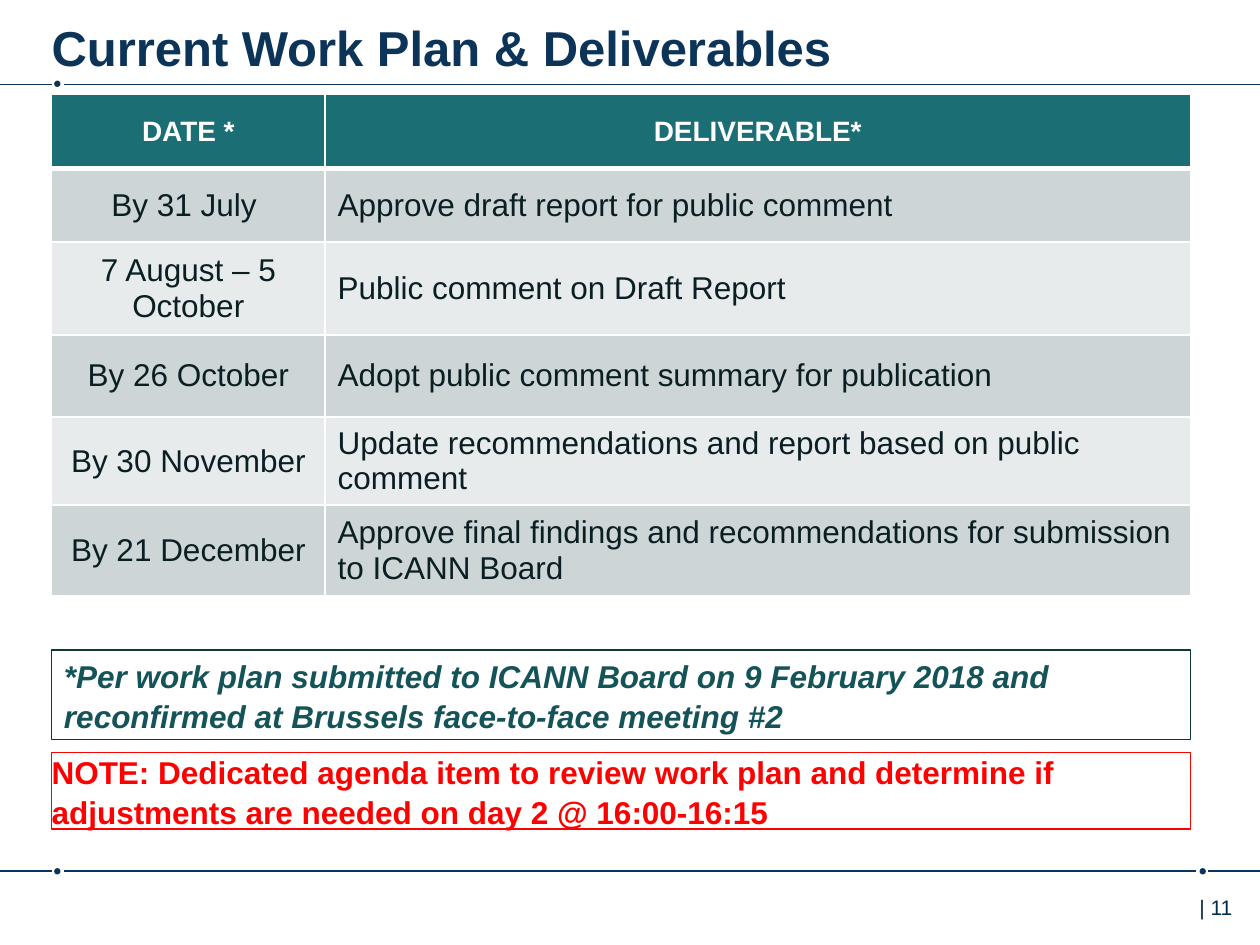
from dataclasses import dataclass

from lxml.etree import SubElement
from pptx import Presentation
from pptx.dml.color import RGBColor
from pptx.enum.shapes import MSO_CONNECTOR, MSO_SHAPE
from pptx.enum.text import MSO_ANCHOR, MSO_AUTO_SIZE, PP_ALIGN
from pptx.oxml.ns import qn
from pptx.util import Inches, Pt


@dataclass(frozen=True)
class Theme:
    font: str = "Arial"
    navy: str = "0C3458"
    page_ink: str = "002B49"
    teal: str = "1B6F74"
    dark_teal: str = "145357"
    teal_line: str = "0E373A"
    ink: str = "0A1F24"
    white: str = "FFFFFF"
    red: str = "FF0000"
    bands: tuple = ("CDD5D6", "E8EBEB")
    title_size: int = 28
    body_size: int = 18
    header_size: int = 16
    page_size: int = 12


THEME = Theme()
LEFT, WIDTH = 0.41, 9.04
COLUMN_WIDTHS = (2.17, 6.87)
ROW_HEIGHTS = (0.59, 0.58, 0.74, 0.65, 0.65, 0.72)
PLAN = (
    ("DATE *", "DELIVERABLE*"),
    ("By 31 July ", "Approve draft report for public comment"),
    ("7 August – 5 October", "Public comment on Draft Report"),
    ("By 26 October", "Adopt public comment summary for publication"),
    ("By 30 November", "Update recommendations and report based on public comment"),
    ("By 21 December", "Approve final findings and recommendations for submission to ICANN Board"),
)


def color(value):
    return RGBColor.from_string(value)


def place(left, top, width, height):
    return [Inches(value) for value in (left, top, width, height)]


def write(frame, text, ink, align=PP_ALIGN.LEFT, spacing=1.0, **font_values):
    """Put one formatted paragraph in a text frame."""
    frame.word_wrap = True
    para = frame.paragraphs[0]
    para.alignment = align
    para.line_spacing = spacing
    span = para.add_run()
    span.text = text
    for name, value in {"name": THEME.font, **font_values}.items():
        setattr(span.font, name, value)
    span.font.color.rgb = color(ink)


def set_insets(frame, left, top, right, bottom):
    insets = {"left": left, "top": top, "right": right, "bottom": bottom}
    for side, value in insets.items():
        setattr(frame, f"margin_{side}", Inches(value))


def add_rule(page, start, end, height):
    rule = page.shapes.add_connector(
        MSO_CONNECTOR.STRAIGHT, *place(start, height, end, height))
    rule.line.color.rgb = color(THEME.navy)
    rule.line.width = Pt(1)
    SubElement(rule._element.spPr, qn("a:effectLst"))


def add_dot(page, left, top):
    dot = page.shapes.add_shape(MSO_SHAPE.OVAL, *place(left, top, 0.05, 0.05))
    dot.shadow.inherit = False
    dot.fill.solid()
    dot.fill.fore_color.rgb = color(THEME.navy)
    dot.line.fill.background()


def add_title(page, text):
    title = page.shapes.title
    title.left, title.top, title.width, title.height = place(LEFT, 0.05, 8.76, 0.49)
    frame = title.text_frame
    frame.auto_size = MSO_AUTO_SIZE.NONE
    frame.vertical_anchor = MSO_ANCHOR.TOP
    set_insets(frame, 0, 0.09, 0, 0)
    write(frame, text, THEME.navy, size=Pt(THEME.title_size), bold=True)


def add_page_number(page, text):
    box = page.shapes.add_textbox(*place(9.42, 7.05, 0.58, 0.4))
    write(box.text_frame, text, THEME.page_ink, size=Pt(THEME.page_size))


def set_borders(cell, bottom):
    properties = cell._tc.get_or_add_tcPr()
    widths = {"lnL": 1, "lnR": 1, "lnT": 1, "lnB": bottom}
    for position, (tag, width) in enumerate(widths.items()):
        border = properties.makeelement(qn(f"a:{tag}"), {"w": str(Pt(width))})
        fill = SubElement(border, qn("a:solidFill"))
        SubElement(fill, qn("a:srgbClr"), val=THEME.white)
        properties.insert(position, border)


def add_plan_table(page):
    table = page.shapes.add_table(
        len(PLAN), len(COLUMN_WIDTHS), *place(LEFT, 0.75, WIDTH, sum(ROW_HEIGHTS))).table
    for column, width in zip(table.columns, COLUMN_WIDTHS):
        column.width = Inches(width)
    for row, height in zip(table.rows, ROW_HEIGHTS):
        row.height = Inches(height)
    for r, texts in enumerate(PLAN):
        header = r == 0
        fill = THEME.teal if header else THEME.bands[(r - 1) % 2]
        ink = THEME.white if header else THEME.ink
        size = THEME.header_size if header else THEME.body_size
        for c, text in enumerate(texts):
            cell = table.cell(r, c)
            cell.vertical_anchor = MSO_ANCHOR.MIDDLE
            cell.fill.solid()
            cell.fill.fore_color.rgb = color(fill)
            # Thick rule between the header and the first row
            set_borders(cell, bottom=3 if header else 1)
            if r == 1:
                cell._tc.tcPr.find(qn("a:lnT")).set("w", str(Pt(3)))
            align = PP_ALIGN.CENTER if header or c == 0 else PP_ALIGN.LEFT
            write(cell.text_frame, text, ink, align, size=Pt(size), bold=header)


def add_note(page, text, top, height, ink, line, insets, italic=False):
    note = page.shapes.add_shape(MSO_SHAPE.RECTANGLE, *place(LEFT, top, WIDTH, height))
    note.shadow.inherit = False
    note.fill.background()
    note.line.color.rgb = color(line)
    note.line.width = Pt(0.75)
    frame = note.text_frame
    frame.vertical_anchor = MSO_ANCHOR.MIDDLE
    set_insets(frame, *insets)
    write(frame, text, ink, spacing=1.06, size=Pt(THEME.body_size), bold=True, italic=italic)


def main():
    deck = Presentation()
    deck.slide_width, deck.slide_height = Inches(10), Inches(7.5)
    page = deck.slides.add_slide(deck.slide_layouts[5])

    # Rules and dots above and below the content
    for start, end, height in ((0, 0.41, 0.67), (0.51, 10, 0.67),
                               (0, 0.41, 6.91), (0.51, 9.49, 6.91), (9.59, 10, 6.91)):
        add_rule(page, start, end, height)
    for left, top in ((0.43, 0.64), (0.43, 6.89), (9.52, 6.89)):
        add_dot(page, left, top)
    add_page_number(page, "| 11")

    # Title and work plan
    add_title(page, "Current Work Plan & Deliverables")
    add_plan_table(page)

    # Notes under the table
    add_note(page, "*Per work plan submitted to ICANN Board on 9 February 2018 and "
             "reconfirmed at Brussels face-to-face meeting #2",
             5.16, 0.71, THEME.dark_teal, THEME.teal_line, (0.1, 0.05, 0.1, 0.05), italic=True)
    add_note(page, "NOTE: Dedicated agenda item to review work plan and determine if "
             "adjustments are needed on day 2 @ 16:00-16:15",
             5.97, 0.61, THEME.red, THEME.red, (0, 0, 0, 0))

    deck.save("out.pptx")


if __name__ == "__main__":
    main()
